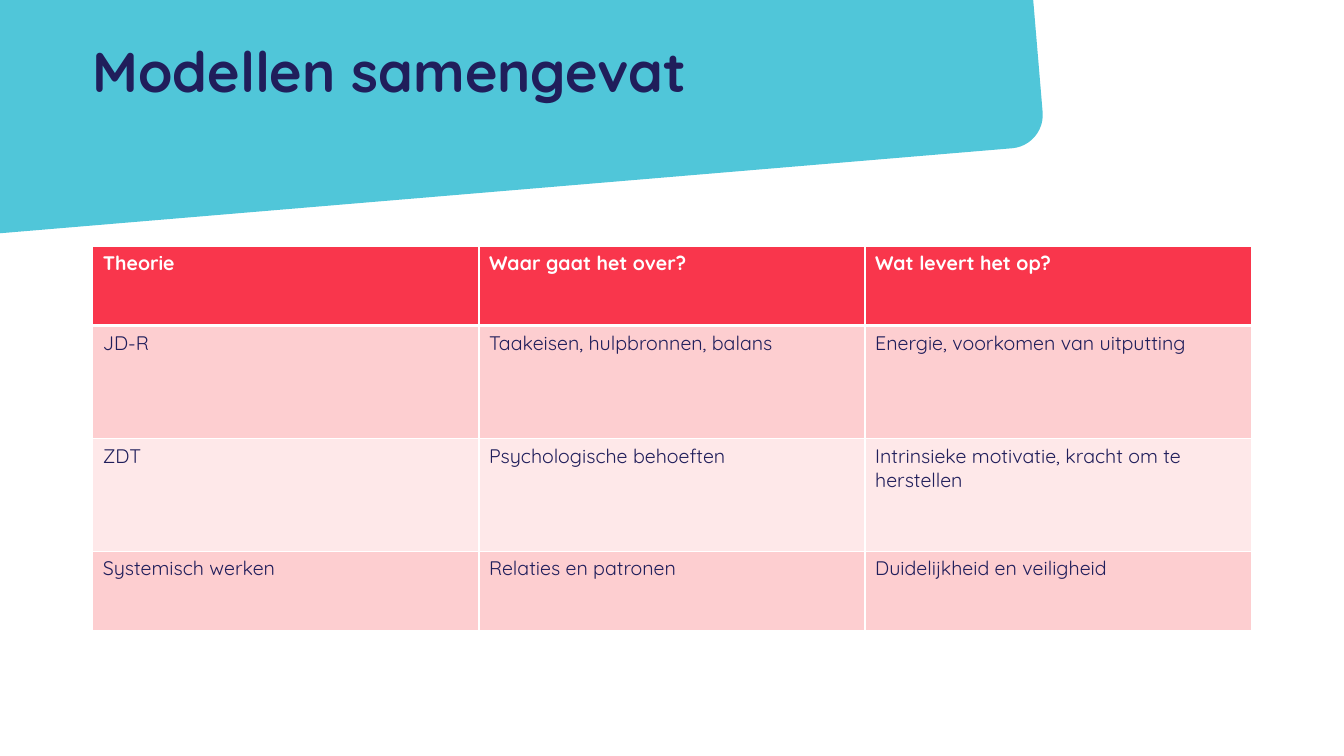
"""Build the slide that summarises three models in a table."""
from lxml.etree import SubElement
from pptx import Presentation
from pptx.dml.color import RGBColor
from pptx.enum.shapes import MSO_SHAPE
from pptx.enum.text import MSO_ANCHOR
from pptx.oxml.ns import qn
from pptx.util import Inches, Pt

TITLE = "Modellen samengevat"
ROWS = [
    ("Theorie", "Waar gaat het over?", "Wat levert het op?"),
    ("JD-R", "Taakeisen, hulpbronnen, balans", "Energie, voorkomen van uitputting"),
    ("ZDT", "Psychologische behoeften", "Intrinsieke motivatie, kracht om te herstellen"),
    ("Systemisch werken", "Relaties en patronen", "Duidelijkheid en veiligheid"),
]
ROW_HEIGHTS = (0.79, 1.12, 1.12, 0.79)
COLUMN_WIDTH = 3.83
LEFT = 0.92
FONT = "Quicksand"
NAVY, WHITE, TEAL, RED = "201E5B", "FFFFFF", "50C6D9", "F9364C"
BANDS = ("FEE8E9", "FDCED0")


def set_fill(target, color):
    target.fill.solid()
    target.fill.fore_color.rgb = RGBColor.from_string(color)


def write(frame, text, size=14, color=NAVY, bold=False):
    frame.word_wrap = True
    run = frame.paragraphs[0].add_run()
    run.text = text
    run.font.name = FONT
    run.font.size = Pt(size)
    run.font.bold = bold
    run.font.color.rgb = RGBColor.from_string(color)


def set_border(cell, side, width):
    properties = cell._tc.get_or_add_tcPr()
    line = SubElement(properties, qn(f"a:ln{side}"), w=str(Pt(width)))
    SubElement(SubElement(line, qn("a:solidFill")), qn("a:srgbClr"), val=WHITE)


def add_banner(slide):
    banner = slide.shapes.add_shape(
        MSO_SHAPE.ROUNDED_RECTANGLE, Inches(-1), Inches(-0.92), Inches(11.27), Inches(2.84))
    banner.adjustments[0] = 0.117
    banner.rotation = 355.2
    banner.shadow.inherit = False
    banner.line.fill.background()
    set_fill(banner, TEAL)


def add_title(slide):
    box = slide.shapes.add_textbox(Inches(LEFT), Inches(0.36), Inches(11.5), Inches(0.79))
    frame = box.text_frame
    frame.margin_left = frame.margin_right = frame.margin_top = frame.margin_bottom = 0
    frame.vertical_anchor = MSO_ANCHOR.TOP
    write(frame, TITLE, size=40, bold=True)


def add_summary(slide):
    columns = len(ROWS[0])
    table = slide.shapes.add_table(
        len(ROWS), columns, Inches(LEFT), Inches(2.44),
        Inches(columns * COLUMN_WIDTH), Inches(sum(ROW_HEIGHTS))).table
    for column in table.columns:
        column.width = Inches(COLUMN_WIDTH)
    for row, (texts, height) in enumerate(zip(ROWS, ROW_HEIGHTS)):
        table.rows[row].height = Inches(height)
        header = row == 0
        borders = {"L": 1, "R": 1, "T": 3 if row == 1 else 1, "B": 3 if header else 1}
        for column, text in enumerate(texts):
            cell = table.cell(row, column)
            for side, width in borders.items():
                set_border(cell, side, width)
            set_fill(cell, RED if header else BANDS[row % 2])
            write(cell.text_frame, text, color=WHITE if header else NAVY, bold=header)


def main():
    presentation = Presentation()
    presentation.slide_width = Inches(13.33)
    presentation.slide_height = Inches(7.5)
    slide = presentation.slides.add_slide(presentation.slide_layouts[6])
    set_fill(slide.background, WHITE)
    add_banner(slide)
    add_title(slide)
    add_summary(slide)
    presentation.save("out.pptx")


if __name__ == "__main__":
    main()
